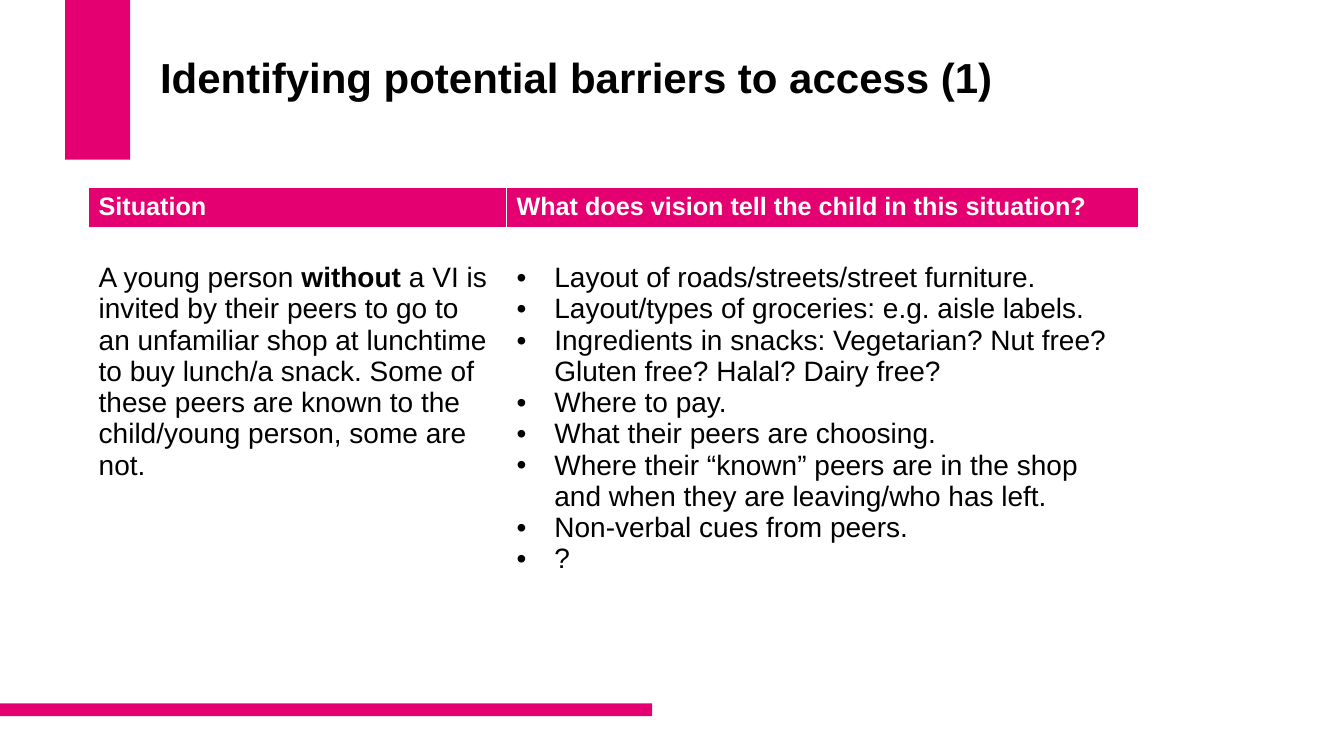
from dataclasses import dataclass

from lxml import etree
from pptx import Presentation
from pptx import util as u
from pptx.dml.color import RGBColor
from pptx.enum import shapes, text
from pptx.oxml.ns import qn

EMU_PER_PX = 9525


@dataclass(frozen=True)
class Theme:
    font: str = "Arial"
    accent: str = "E50071"
    ink: str = "000000"
    paper: str = "FFFFFF"
    title_pt: int = 30
    header_pt: int = 18
    body_pt: int = 20


@dataclass(frozen=True)
class Bar:
    left: int
    top: int
    width: int
    height: int


@dataclass(frozen=True)
class Run:
    words: str
    bold: bool = False


@dataclass(frozen=True)
class Column:
    width: int
    heading: str
    paragraphs: list[list[Run]]
    bulleted: bool = False


THEME = Theme()
BARS = [Bar(62, 0, 62, 152), Bar(0, 670, 621, 12)]
TITLE = "Identifying potential barriers to access (1)"
HEADER_HEIGHT, BODY_HEIGHT = 37, 397
SIDE_INSET, EDGE_INSET, BODY_TOP_INSET = 10, 5, 33
BULLET_INDENT = 36

SITUATION = [
    Run("A young person "),
    Run("without ", bold=True),
    Run("a VI is invited by their peers to go to an unfamiliar shop at lunchtime "
        "to buy lunch/a snack. Some of these peers are known to the "
        "child/young person, some are not."),
]
VISION_CUES = [
    "Layout of roads/streets/street furniture.",
    "Layout/types of groceries: e.g. aisle labels.",
    "Ingredients in snacks: Vegetarian? Nut free? Gluten free? Halal? Dairy free?",
    "Where to pay.",
    "What their peers are choosing.",
    "Where their “known” peers are in the shop and when they are leaving/who has left.",
    "Non-verbal cues from peers.",
    "?",
]
COLUMNS = [
    Column(398, "Situation", [SITUATION]),
    Column(602, "What does vision tell the child in this situation?",
           [[Run(cue)] for cue in VISION_CUES], bulleted=True),
]


def px(length: int) -> u.Emu:
    return u.Emu(length * EMU_PER_PX)


def style_run(run, size: int, color: str, bold: bool) -> None:
    run.font.name = THEME.font
    run.font.size = u.Pt(size)
    run.font.bold = bold
    run.font.color.rgb = RGBColor.from_string(color)


def draw_bar(slide, bar: Bar) -> None:
    block = slide.shapes.add_shape(shapes.MSO_SHAPE.RECTANGLE, px(bar.left), px(bar.top),
                                   px(bar.width), px(bar.height))
    block.shadow.inherit = False
    block.fill.solid()
    block.fill.fore_color.rgb = RGBColor.from_string(THEME.accent)
    block.line.fill.background()


def draw_title(slide) -> None:
    frame = slide.shapes.add_textbox(px(143), px(38), px(922), px(118)).text_frame
    frame.word_wrap = True
    frame.vertical_anchor = text.MSO_ANCHOR.MIDDLE
    frame.margin_bottom = px(46)
    frame.text = TITLE
    heading = frame.paragraphs[0]
    heading.line_spacing = 0.9
    style_run(heading.runs[0], THEME.title_pt, THEME.ink, True)


def add_bullet(paragraph) -> None:
    properties = paragraph._p.get_or_add_pPr()
    properties.set("marL", str(px(BULLET_INDENT)))
    properties.set("indent", str(-px(BULLET_INDENT)))
    etree.SubElement(properties, qn("a:buFont")).set("typeface", THEME.font)
    etree.SubElement(properties, qn("a:buChar")).set("char", "•")


def prepare_cell(cell, fill: str, top_inset: int) -> None:
    cell.fill.solid()
    cell.fill.fore_color.rgb = RGBColor.from_string(fill)
    cell.margin_left = cell.margin_right = px(SIDE_INSET)
    cell.margin_top = px(top_inset)
    cell.margin_bottom = px(EDGE_INSET)


def fill_column(table, index: int, column: Column) -> None:
    table.columns[index].width = px(column.width)
    header, body = table.cell(0, index), table.cell(1, index)

    prepare_cell(header, THEME.accent, EDGE_INSET)
    header.text_frame.text = column.heading
    style_run(header.text_frame.paragraphs[0].runs[0], THEME.header_pt, THEME.paper, True)

    prepare_cell(body, THEME.paper, BODY_TOP_INSET)
    frame = body.text_frame
    for position, parts in enumerate(column.paragraphs):
        paragraph = frame.add_paragraph() if position else frame.paragraphs[0]
        if column.bulleted:
            add_bullet(paragraph)
        for part in parts:
            run = paragraph.add_run()
            run.text = part.words
            style_run(run, THEME.body_pt, THEME.ink, part.bold)


def draw_table(slide) -> None:
    width = sum(column.width for column in COLUMNS)
    table = slide.shapes.add_table(2, len(COLUMNS), px(84), px(178), px(width),
                                   px(HEADER_HEIGHT + BODY_HEIGHT)).table
    table.horz_banding = False
    for row, height in zip(table.rows, (HEADER_HEIGHT, BODY_HEIGHT)):
        row.height = px(height)
    for index, column in enumerate(COLUMNS):
        fill_column(table, index, column)


def main() -> None:
    deck = Presentation()
    deck.slide_width, deck.slide_height = px(1280), px(720)
    slide = deck.slides.add_slide(deck.slide_layouts[6])
    for bar in BARS:
        draw_bar(slide, bar)
    draw_title(slide)
    draw_table(slide)
    deck.save("out.pptx")


if __name__ == "__main__":
    main()
